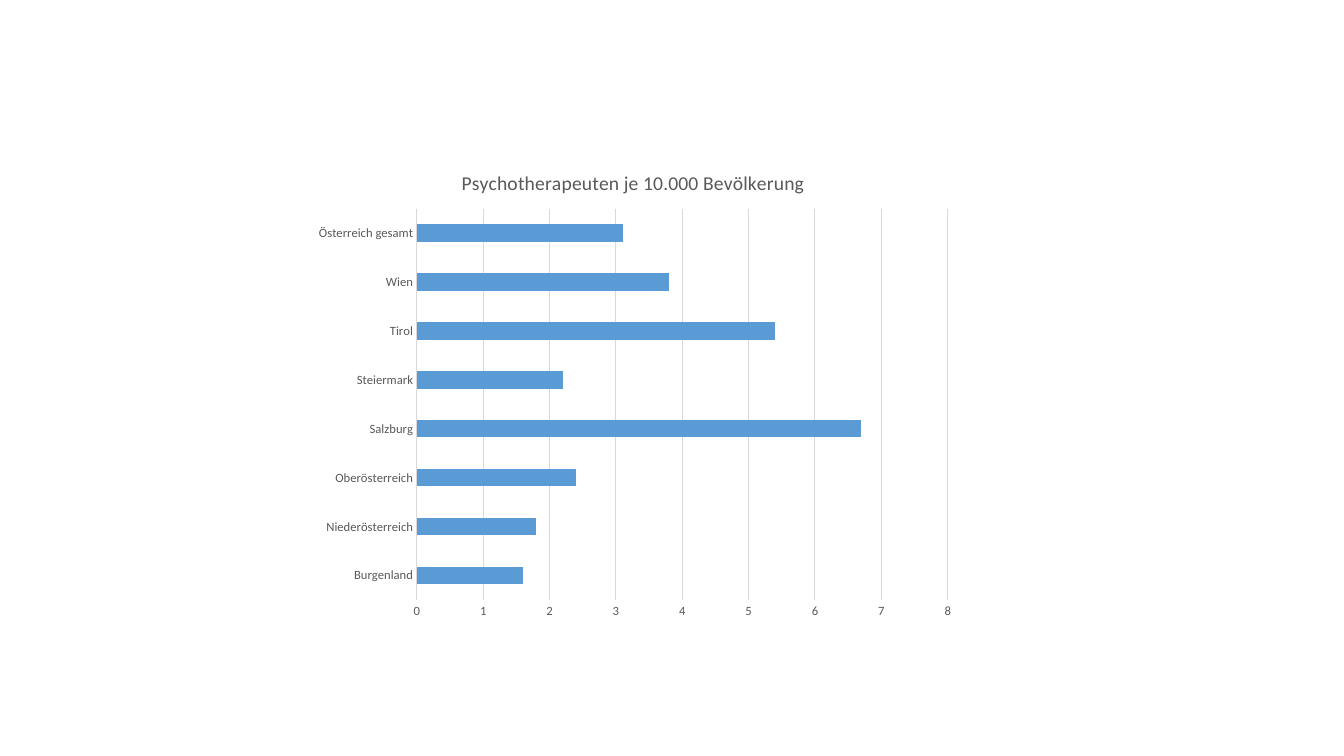
from dataclasses import dataclass

from lxml import etree
from pptx import Presentation
from pptx import util as u
from pptx.chart import data as chart_data
from pptx.dml.color import RGBColor
from pptx.enum import chart as c
from pptx.oxml import ns


@dataclass(frozen=True)
class Theme:
    font: str = "Calibri"
    ink: str = "595959"
    grid: str = "D9D9D9"
    bar: str = "5B9BD5"
    title_size: float = 14
    label_size: float = 9
    line_width: float = 0.75


THEME = Theme()
TITLE = "Psychotherapeuten je 10.000 Bevölkerung"
DENSITY = {
    "Burgenland": 1.6,
    "Niederösterreich": 1.8,
    "Oberösterreich": 2.4,
    "Salzburg": 6.7,
    "Steiermark": 2.2,
    "Tirol": 5.4,
    "Wien": 3.8,
    "Österreich gesamt": 3.1,
}


def format_font(font, size, color=THEME.ink):
    font.name = THEME.font
    font.size = u.Pt(size)
    font.bold = False
    font.color.rgb = RGBColor.from_string(color)


def write_text(frame, text, **font_format):
    para = frame.paragraphs[0]
    span = para.add_run()
    span.text = text
    format_font(span.font, **font_format)


def format_line(line):
    line.color.rgb = RGBColor.from_string(THEME.grid)
    line.width = u.Pt(THEME.line_width)


def place_plot(chart, **fractions):
    """Fix the inner plot area as fractions (x, y, w, h) of the chart box."""
    plot_area = chart.plots[0]._element.getparent()
    for old in plot_area.findall(ns.qn("c:layout")):
        plot_area.remove(old)
    layout = etree.Element(ns.qn("c:layout"))
    plot_area.insert(0, layout)
    manual = etree.SubElement(layout, ns.qn("c:manualLayout"))
    settings = {"layoutTarget": "inner", "xMode": "edge", "yMode": "edge", **fractions}
    for name, value in settings.items():
        etree.SubElement(manual, ns.qn(f"c:{name}"), val=str(value))


def format_axes(chart):
    for axis in (chart.category_axis, chart.value_axis):
        axis.major_tick_mark = axis.minor_tick_mark = c.XL_TICK_MARK.NONE
        format_font(axis.tick_labels.font, THEME.label_size)
    format_line(chart.category_axis.format.line)
    values = chart.value_axis
    values.minimum_scale, values.maximum_scale, values.major_unit = 0, 8, 1
    values.format.line.fill.background()
    values.has_major_gridlines = True
    format_line(values.major_gridlines.format.line)


def add_density_chart(page, left, top, width, height):
    source = chart_data.CategoryChartData()
    source.categories = list(DENSITY)
    source.add_series("Series 1", list(DENSITY.values()))
    box = [u.Inches(length) for length in (left, top, width, height)]
    chart = page.shapes.add_chart(c.XL_CHART_TYPE.BAR_CLUSTERED, *box, source).chart
    chart.has_legend = False
    chart.font.name = THEME.font
    chart.has_title = True
    write_text(chart.chart_title.text_frame, TITLE, size=THEME.title_size)
    chart.chart_title.include_in_layout = False
    plot = chart.plots[0]
    plot.gap_width = 182
    plot.vary_by_categories = False
    fill = plot.series[0].format.fill
    fill.solid()
    fill.fore_color.rgb = RGBColor.from_string(THEME.bar)
    format_axes(chart)
    place_plot(chart, x=0.17, y=0.12, w=0.81, h=0.82)


def main():
    deck = Presentation()
    deck.slide_width, deck.slide_height = u.Inches(13.33), u.Inches(7.5)
    page = deck.slides.add_slide(deck.slide_layouts[6])
    add_density_chart(page, 3.03, 1.5, 6.5, 4.74)
    deck.save("out.pptx")


if __name__ == "__main__":
    main()
